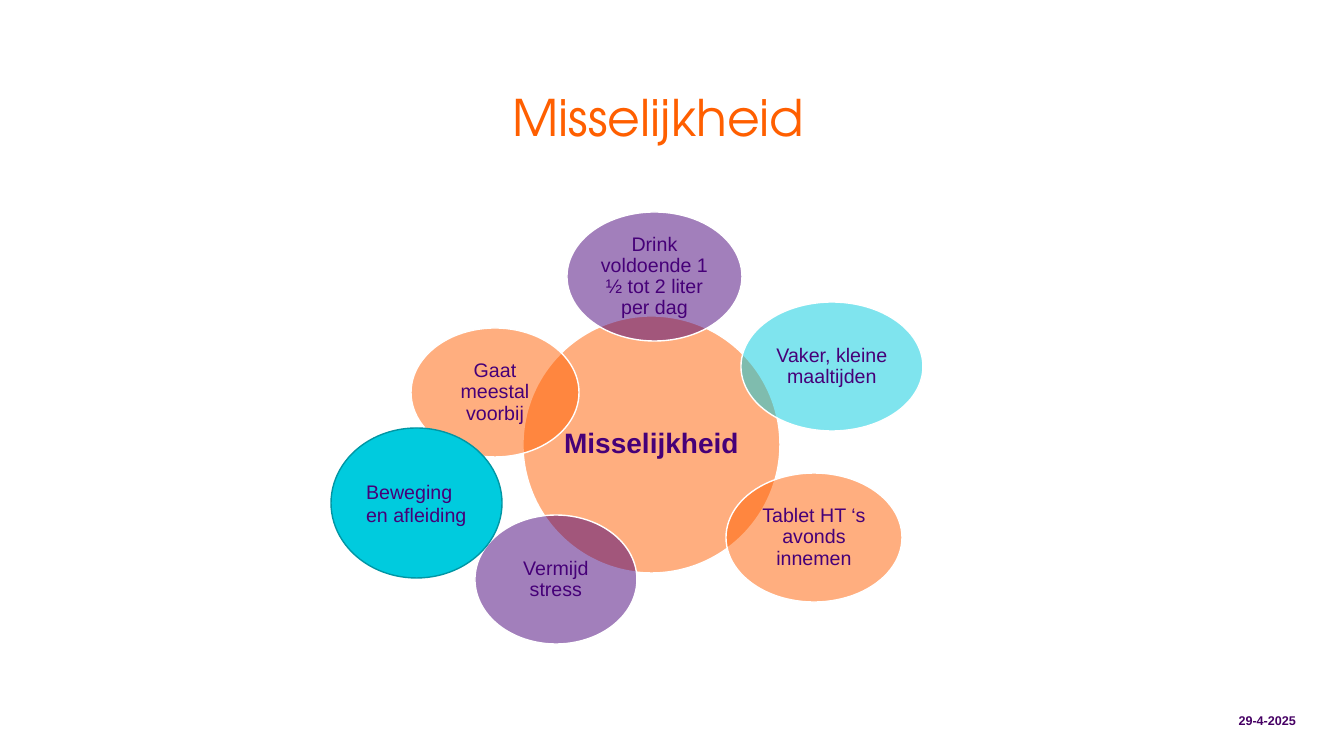
import pptx
import pptx.util
import pptx.dml.color
import pptx.enum.shapes
import pptx.enum.text
import pptx.oxml
import pptx.oxml.ns
from lxml import etree

RGBColor = pptx.dml.color.RGBColor
ORANGE = RGBColor(0xFF, 0x5F, 0x00)
PURPLE = RGBColor(0x46, 0x00, 0x78)
DARK_PURPLE = RGBColor(0x46, 0x00, 0x64)
CYAN = RGBColor(0x00, 0xCB, 0xDE)
DARK_CYAN = RGBColor(0x00, 0x96, 0xA4)
WHITE = RGBColor(0xFF, 0xFF, 0xFF)

EMU_PER_PX = 12192000 / 1344
ALIGN = pptx.enum.text.PP_ALIGN
ANCHOR = pptx.enum.text.MSO_ANCHOR


def px(length):
    return pptx.util.Emu(round(length * EMU_PER_PX))


class SlideBuilder:
    body_font = "Arial"
    title_font = "TeX Gyre Adventor"

    def __init__(self, presentation):
        layout = presentation.slide_layouts.get_by_name("Title Only")
        self.slide = presentation.slides.add_slide(layout)

    def set_text(self, shape, text, size, color, align, anchor=ANCHOR.MIDDLE,
                 margins=(10, 5), spacing=1.0, font=body_font, bold=False):
        frame = shape.text_frame
        horizontal, vertical = map(px, margins)
        paragraph = frame.paragraphs[0]
        paragraph.text = text
        run_font = paragraph.runs[0].font
        formats = [
            (frame, {
                "word_wrap": True, "vertical_anchor": anchor,
                "auto_size": pptx.enum.text.MSO_AUTO_SIZE.NONE,
                "margin_left": horizontal, "margin_right": horizontal,
                "margin_top": vertical, "margin_bottom": vertical,
            }),
            (paragraph, {"alignment": align, "line_spacing": spacing}),
            (run_font, {
                "name": font, "size": pptx.util.Pt(size), "bold": bold,
            }),
            (run_font.color, {"rgb": color}),
        ]
        for target, values in formats:
            for name, value in values.items():
                setattr(target, name, value)

    def title(self, text, left, top, width, height):
        shape = self.slide.shapes.title
        shape.left, shape.top = px(left), px(top)
        shape.width, shape.height = px(width), px(height)
        self.set_text(shape, text, 36, ORANGE, ALIGN.CENTER, ANCHOR.TOP,
                      spacing=0.9, font=self.title_font)

    def date(self, text, left, top, width, height):
        shape = self.slide.shapes.add_textbox(*map(px, (left, top, width, height)))
        self.set_text(shape, text, 9, DARK_PURPLE, ALIGN.RIGHT, bold=True)

    def ellipse(self, box, fill, line=WHITE, opacity=100):
        shape = self.slide.shapes.add_shape(
            pptx.enum.shapes.MSO_SHAPE.OVAL, *map(px, box))
        shape.shadow.inherit = False
        shape.fill.solid()
        shape.fill.fore_color.rgb = fill
        shape.line.color.rgb = line
        shape.line.width = pptx.util.Pt(1)
        if opacity < 100:
            qn = pptx.oxml.ns.qn
            solid_fill = shape.element.spPr.find(qn("a:solidFill"))
            color = solid_fill.find(qn("a:srgbClr"))
            etree.SubElement(color, qn("a:alpha"), val=str(opacity * 1000))
        return shape

    def bubble(self, text, box, fill, size=14, bold=False):
        """Half-transparent ellipse with centred text."""
        shape = self.ellipse(box, fill, opacity=50)
        self.set_text(shape, text, size, PURPLE, ALIGN.CENTER,
                      margins=(2, 2), spacing=0.9, bold=bold)

    def solid_bubble(self, text, box):
        shape = self.ellipse(box, CYAN, DARK_CYAN)
        self.set_text(shape, text, 14, PURPLE, ALIGN.LEFT)


def main():
    presentation = pptx.Presentation()
    presentation.slide_width, presentation.slide_height = px(1344), px(756)
    builder = SlideBuilder(presentation)
    builder.title("Misselijkheid", 125, 88, 1067, 49)
    builder.date("29-4-2025", 1178, 700, 128, 40)
    builder.bubble("Misselijkheid", (523, 316, 257, 257), ORANGE, 20, True)
    advice_height = 129
    advice = [
        ("Drink voldoende 1 ½ tot 2 liter per dag", 567, 212, 175, PURPLE),
        ("Vaker, kleine maaltijden", 741, 302, 182, CYAN),
        ("Tablet HT ‘s avonds innemen", 726, 473, 176, ORANGE),
        ("Vermijd stress", 475, 515, 162, PURPLE),
        ("Gaat meestal voorbij", 411, 328, 168, ORANGE),
    ]
    for text, left, top, width, fill in advice:
        builder.bubble(text, (left, top, width, advice_height), fill)
    builder.solid_bubble("Beweging en afleiding", (331, 428, 171, 150))
    presentation.save("out.pptx")


if __name__ == "__main__":
    main()
